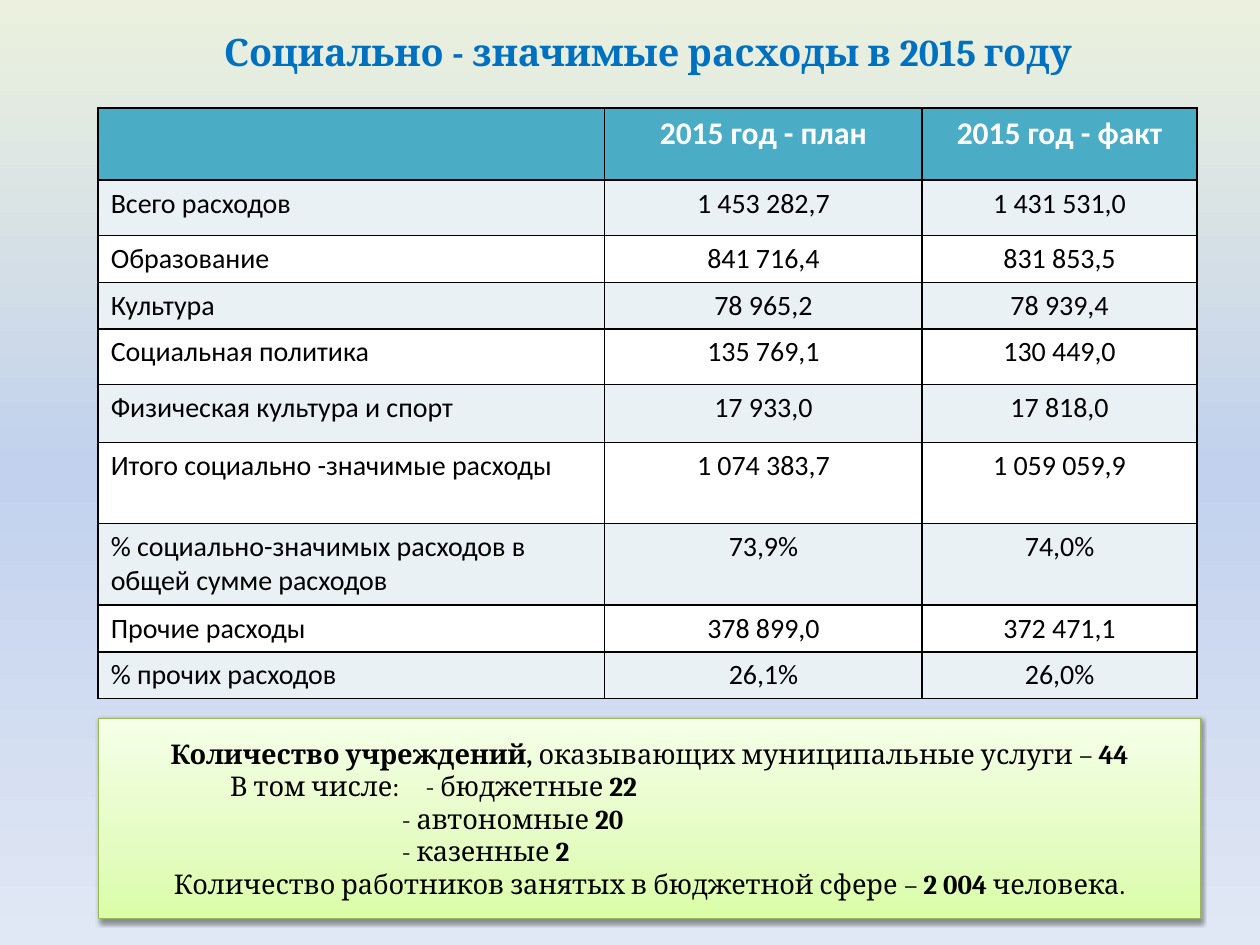
"""Build a slide on socially significant spending in 2015."""
from typing import NamedTuple

import pptx
import pptx.dml.color
import pptx.enum.shapes
import pptx.enum.text
import pptx.oxml
import pptx.oxml.ns
import pptx.util
from lxml import etree

Cm = pptx.util.Cm
Pt = pptx.util.Pt
RGBColor = pptx.dml.color.RGBColor
Align = pptx.enum.text.PP_ALIGN
Anchor = pptx.enum.text.MSO_ANCHOR
qn = pptx.oxml.ns.qn

BLACK = RGBColor(0x00, 0x00, 0x00)
WHITE = RGBColor(0xFF, 0xFF, 0xFF)
TITLE_BLUE = RGBColor(0x00, 0x70, 0xC0)
HEADER_TEAL = RGBColor(0x4B, 0xAC, 0xC6)
BAND = RGBColor(0xE9, 0xF1, 0xF5)
GREEN_LINE = RGBColor(0x98, 0xB9, 0x55)
SKY_STOPS = [
    (0, RGBColor(0xEB, 0xF1, 0xDE)),
    (50, RGBColor(0xC2, 0xD1, 0xED)),
    (100, RGBColor(0xE1, 0xE8, 0xF5)),
]
GREEN_STOPS = [
    (0, RGBColor(0xDA, 0xFD, 0xA7)),
    (35, RGBColor(0xE4, 0xFC, 0xC2)),
    (100, RGBColor(0xF5, 0xFF, 0xE7)),
]
LEFT = Cm(1.98)


class Row(NamedTuple):
    label: str
    plan: str
    fact: str
    height: float


class Line(NamedTuple):
    runs: list[tuple[str, bool]]
    indent: float = 0
    tab: float = 0


ROWS = [
    Row("", "2015 год - план", "2015 год - факт", 1.45),
    Row("Всего расходов", "1 453 282,7", "1 431 531,0", 1.12),
    Row("Образование", "841 716,4", "831 853,5", 0.94),
    Row("Культура", "78 965,2", "78 939,4", 0.94),
    Row("Социальная политика", "135 769,1", "130 449,0", 1.12),
    Row("Физическая культура и спорт", "17 933,0", "17 818,0", 1.17),
    Row("Итого социально -значимые расходы", "1 074 383,7", "1 059 059,9", 1.63),
    Row("% социально-значимых расходов в общей сумме расходов", "73,9%", "74,0%", 1.65),
    Row("Прочие расходы", "378 899,0", "372 471,1", 0.94),
    Row("% прочих расходов", "26,1%", "26,0%", 0.94),
]
COLUMNS = [10.21, 6.4, 5.54]

LINES = [
    Line([("Количество учреждений, ", True),
          ("оказывающих муниципальные услуги – ", False), ("44", True)]),
    Line([("В том числе:\t- бюджетные ", False), ("22", True)], 2.41, 6.17),
    Line([("- автономные ", False), ("20", True)], 5.87),
    Line([("- казенные ", False), ("2", True)], 5.87),
    Line([("Количество работников занятых в бюджетной сфере – ", False),
          ("2 004 ", True), ("человека.", False)]),
]


def add_run(p, text: str, *, size: float, font: str, color=BLACK, bold=False) -> None:
    r = p.add_run()
    r.text = text
    r.font.size = Pt(size)
    r.font.name = font
    r.font.bold = bold
    r.font.color.rgb = color


def set_gradient(fill, element, stops, angle: float) -> None:
    fill.gradient()
    fill.gradient_angle = angle
    stop_list = element.find(".//" + qn("a:gsLst"))
    for gs in list(stop_list):
        stop_list.remove(gs)
    for position, color in stops:
        gs = etree.SubElement(stop_list, qn("a:gs"), pos=str(position * 1000))
        etree.SubElement(gs, qn("a:srgbClr"), val=str(color))


def set_borders(cell) -> None:
    props = cell._tc.get_or_add_tcPr()
    for index, side in enumerate(("lnL", "lnR", "lnT", "lnB")):
        ln = etree.Element(qn(f"a:{side}"), w=str(Pt(1)))
        fill = etree.SubElement(ln, qn("a:solidFill"))
        etree.SubElement(fill, qn("a:srgbClr"), val=str(BLACK))
        props.insert(index, ln)


def add_shadow(sp) -> None:
    sp.shadow.inherit = False
    effects = sp.element.spPr.find(qn("a:effectLst"))
    shadow = etree.SubElement(
        effects, qn("a:outerShdw"), blurRad=str(Pt(3.1)), dist=str(Pt(1.6)),
        dir="5400000", rotWithShape="0")
    color = etree.SubElement(shadow, qn("a:srgbClr"), val=str(BLACK))
    etree.SubElement(color, qn("a:alpha"), val="38000")


def add_title(s) -> None:
    sp = s.shapes.add_textbox(LEFT, Cm(0.33), Cm(22.17), Cm(1.4))
    tf = sp.text_frame
    tf.word_wrap = True
    tf.vertical_anchor = Anchor.MIDDLE
    p = tf.paragraphs[0]
    p.alignment = Align.CENTER
    add_run(p, "Социально - значимые расходы в 2015 году",
            size=21.6, font="Cambria", color=TITLE_BLUE, bold=True)


def add_spending_table(s) -> None:
    height = Cm(sum(row.height for row in ROWS))
    table = s.shapes.add_table(len(ROWS), len(COLUMNS), LEFT, Cm(2.18),
                               Cm(sum(COLUMNS)), height).table
    for column, width in zip(table.columns, COLUMNS):
        column.width = Cm(width)
    for i, row in enumerate(ROWS):
        table.rows[i].height = Cm(row.height)
        header = i == 0
        color = HEADER_TEAL if header else BAND if i % 2 else WHITE
        for j, text in enumerate((row.label, row.plan, row.fact)):
            cell = table.cell(i, j)
            cell.fill.solid()
            cell.fill.fore_color.rgb = color
            set_borders(cell)
            p = cell.text_frame.paragraphs[0]
            p.alignment = Align.CENTER if j else Align.LEFT
            if text:
                add_run(p, text, size=18 if header else 16, font="Calibri",
                        color=WHITE if header else BLACK, bold=header)


def add_institutions_box(s) -> None:
    sp = s.shapes.add_shape(pptx.enum.shapes.MSO_SHAPE.RECTANGLE,
                            LEFT, Cm(14.48), Cm(22.23), Cm(4.04))
    set_gradient(sp.fill, sp.element, GREEN_STOPS, 90)
    sp.line.color.rgb = GREEN_LINE
    sp.line.width = Pt(0.75)
    add_shadow(sp)
    tf = sp.text_frame
    tf.word_wrap = True
    tf.vertical_anchor = Anchor.MIDDLE
    for i, line in enumerate(LINES):
        p = tf.add_paragraph() if i else tf.paragraphs[0]
        p.alignment = Align.LEFT if line.indent else Align.CENTER
        props = p._p.get_or_add_pPr()
        props.set("marL", "0")
        props.set("indent", str(Cm(line.indent)))
        if line.tab:
            tabs = etree.SubElement(props, qn("a:tabLst"))
            etree.SubElement(tabs, qn("a:tab"), pos=str(Cm(line.tab)), algn="l")
        for text, bold in line.runs:
            add_run(p, text, size=15.5, font="Cambria", bold=bold)


def main() -> None:
    prs = pptx.Presentation()
    prs.slide_width = Cm(25.4)
    prs.slide_height = Cm(19.05)
    s = prs.slides.add_slide(prs.slide_layouts[6])
    set_gradient(s.background.fill, s.element, SKY_STOPS, 270)
    add_title(s)
    add_spending_table(s)
    add_institutions_box(s)
    prs.save("out.pptx")


if __name__ == "__main__":
    main()
